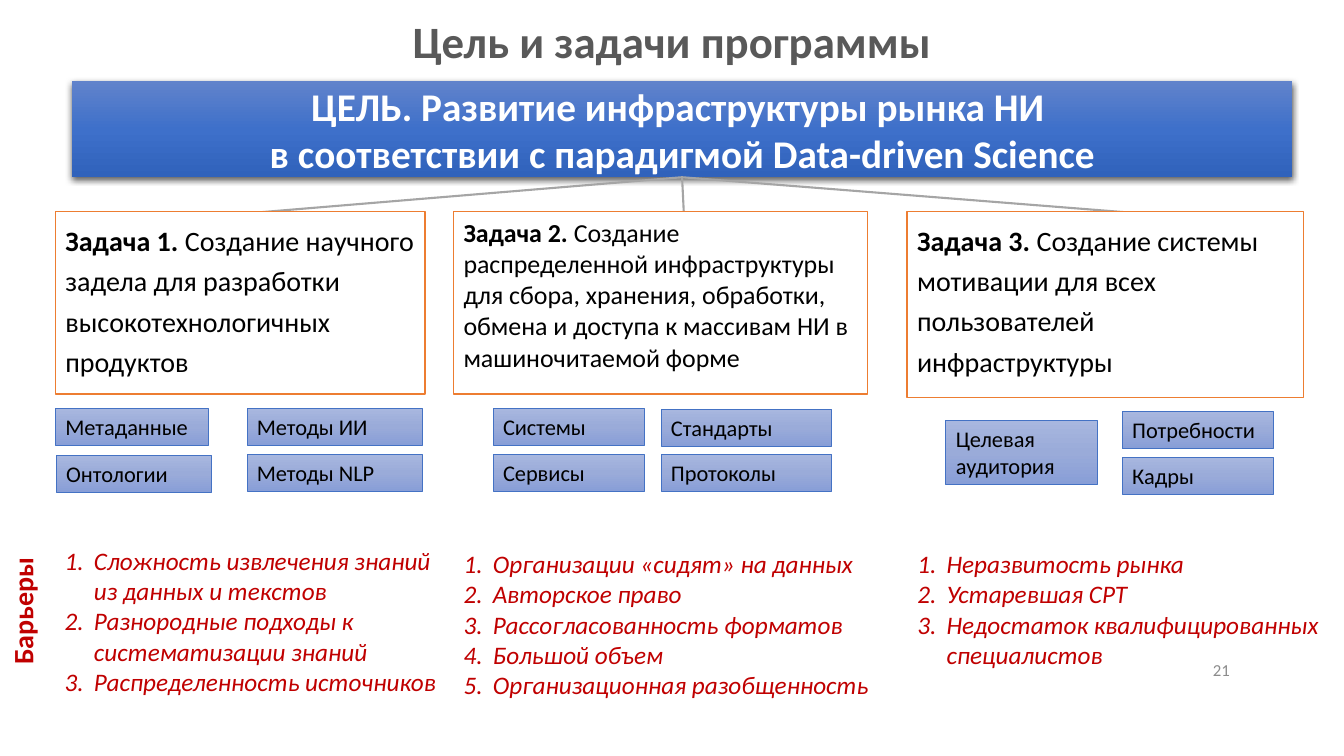
from copy import deepcopy

from lxml.etree import SubElement
from pptx import Presentation
from pptx.dml.color import RGBColor
from pptx.enum.shapes import MSO_CONNECTOR, MSO_SHAPE
from pptx.enum.text import MSO_ANCHOR, MSO_AUTO_SIZE, PP_ALIGN
from pptx.oxml.ns import qn
from pptx.util import Inches, Pt

COLS, ROWS = 160, 90
GOAL = ("6183CB", "3E70CA", "3062BB")
TAG = ("A8B7DF", "9AABD9", "889ED7")
RED, BLACK, WHITE = "C00000", "000000", "FFFFFF"

TASKS = [
    ((6.6, 25.2, 44, 21.7), 20, 1.2, "Задача 1. ",
     "Создание научного задела для разработки высокотехнологичных продуктов"),
    ((54, 25.2, 49.3, 21.7), 18.5, 1, "Задача 2. ",
     "Создание распределенной инфраструктуры для сбора, хранения, обработки, "
     "обмена и доступа к массивам НИ в машиночитаемой форме"),
    ((108, 25.2, 47.2, 22.1), 20, 1.2, "Задача 3. ",
     "Создание системы мотивации для всех пользователей инфраструктуры"),
]
TAGS = [
    ((6.6, 48.6, 18.2, 4.4), "Метаданные"),
    ((6.7, 54.2, 18.5, 4.4), "Онтологии"),
    ((29.4, 48.6, 20.9, 4.4), "Методы ИИ"),
    ((29.4, 54.1, 20.9, 4.4), "Методы NLP"),
    ((58.7, 48.6, 18, 4.4), "Системы"),
    ((58.7, 54.1, 18, 4.4), "Сервисы"),
    ((78.7, 48.7, 20.3, 4.4), "Стандарты"),
    ((78.7, 54.1, 20.3, 4.4), "Протоколы"),
    ((112.6, 50, 18, 7.7), "Целевая\vаудитория"),
    ((133.6, 49, 18, 4.4), "Потребности"),
    ((133.6, 54.4, 18, 4.4), "Кадры"),
]
LISTS = [
    ((6.5, 64.3, 47.8, 23), [
        "Сложность извлечения знаний \vиз данных и текстов",
        "Разнородные подходы к \vсистематизации знаний",
        "Распределенность источников"]),
    ((54, 64.7, 51.1, 23), [
        "Организации «сидят» на данных", "Авторское право",
        "Рассогласованность форматов", "Большой объем",
        "Организационная разобщенность"]),
    ((108, 64.7, 50.6, 19.4), [
        "Неразвитость рынка", "Устаревшая СРТ",
        "Недостаток квалифицированных\vспециалистов"]),
]


def hue(code):
    """Turn a hex string into a colour."""
    return RGBColor.from_string(code)


class Board:
    """Holds the slide, its grid and its text style."""

    face = "Calibri"

    def __init__(self, deck):
        """Add a slide with a title and four bodies."""
        self.col = deck.slide_width / COLS
        self.row = deck.slide_height / ROWS
        self.slide = deck.slides.add_slide(deck.slide_layouts[4])
        self.shapes = self.slide.shapes

    def scale(self, box):
        """Turn grid units into lengths."""
        left, top, wide, high = box
        return (round(left * self.col), round(top * self.row),
                round(wide * self.col), round(high * self.row))

    def place(self, shape, box):
        """Move a placeholder onto the grid."""
        shape.left, shape.top, shape.width, shape.height = self.scale(box)

    def style(self, para, size, tone, bold=None, slant=None, align=PP_ALIGN.LEFT):
        """Set the font and alignment of a paragraph."""
        para.alignment = align
        font = para.font
        font.name, font.size = self.face, Pt(size)
        font.bold, font.italic = bold, slant
        font.color.rgb = hue(tone)

    def title(self, box, text):
        """Fill the title."""
        shape = self.shapes.title
        self.place(shape, box)
        frame = shape.text_frame
        frame.text = text
        frame.vertical_anchor = MSO_ANCHOR.TOP
        frame.auto_size = MSO_AUTO_SIZE.NONE
        para = frame.paragraphs[0]
        para.line_spacing = 0.9
        self.style(para, 32, "595959", True, align=PP_ALIGN.CENTER)

    def list(self, slot, box, items):
        """Fill a body with a numbered list."""
        shape = self.slide.placeholders[slot]
        self.place(shape, box)
        frame = shape.text_frame
        frame.text = "\n".join(items)
        frame.vertical_anchor = MSO_ANCHOR.TOP
        frame.auto_size = MSO_AUTO_SIZE.NONE
        frame.word_wrap = False
        for para in frame.paragraphs:
            props = para._p.get_or_add_pPr()
            props.set("marL", str(Inches(0.29)))
            props.set("indent", str(-Inches(0.29)))
            SubElement(props, qn("a:buAutoNum"), type="arabicPeriod")
            para.space_before = Pt(0)
            self.style(para, 18, RED, False, True)

    def drop(self, slot):
        """Remove an unused placeholder."""
        item = self.slide.placeholders[slot]._element
        item.getparent().remove(item)

    def block(self, box, tones, edge=None, width=0.5):
        """Draw a plain or graded box."""
        shape = self.shapes.add_shape(MSO_SHAPE.RECTANGLE, *self.scale(box))
        shape.shadow.inherit = False
        shape.text_frame.word_wrap = True
        shape.text_frame.vertical_anchor = MSO_ANCHOR.TOP
        fill = shape.fill
        if len(tones) == 1:
            fill.solid()
            fill.fore_color.rgb = hue(tones[0])
        else:
            fill.gradient()
            fill.gradient_angle = 270
            stops = shape._element.spPr.find(".//" + qn("a:gsLst"))
            stops.insert(1, deepcopy(stops[0]))
            for stop, tone, spot in zip(fill.gradient_stops, tones, (0, 0.5, 1)):
                stop.color.rgb = hue(tone)
                stop.position = spot
        if edge:
            shape.line.color.rgb = hue(edge)
            shape.line.width = Pt(width)
        else:
            shape.line.fill.background()
        return shape

    def goal(self, box, text):
        """Draw the goal banner with its shadow."""
        shape = self.block(box, GOAL)
        effect = shape._element.spPr.find(qn("a:effectLst"))
        shade = SubElement(effect, qn("a:outerShdw"), blurRad=str(Pt(4.5)),
                           dist=str(Pt(1.5)), dir="5400000", rotWithShape="0")
        tone = SubElement(shade, qn("a:srgbClr"), val=BLACK)
        SubElement(tone, qn("a:alpha"), val="63000")
        frame = shape.text_frame
        frame.vertical_anchor = MSO_ANCHOR.MIDDLE
        para = frame.paragraphs[0]
        para.text = text
        self.style(para, 28, WHITE, True, align=PP_ALIGN.CENTER)

    def task(self, box, size, pitch, head, text):
        """Draw a task with a bold lead."""
        para = self.block(box, [WHITE], "ED7D31", 1).text_frame.paragraphs[0]
        for part, bold in ((head, True), (text, False)):
            run = para.add_run()
            run.text, run.font.bold = part, bold
        para.line_spacing, para.space_before = pitch, Pt(10)
        self.style(para, size, BLACK)

    def tag(self, box, text):
        """Draw a small keyword box."""
        para = self.block(box, TAG, "4472C4").text_frame.paragraphs[0]
        para.text = text
        self.style(para, 16, BLACK)

    def label(self, box, text, size, tone, bold, align, turn=0):
        """Write a free line of text."""
        shape = self.shapes.add_textbox(*self.scale(box))
        shape.rotation = turn
        frame = shape.text_frame
        frame.word_wrap = not turn
        frame.vertical_anchor = MSO_ANCHOR.TOP if turn else MSO_ANCHOR.MIDDLE
        para = frame.paragraphs[0]
        para.text = text
        self.style(para, size, tone, bold, align=align)

    def link(self, start, end):
        """Draw a grey line between two points."""
        line = self.shapes.add_connector(
            MSO_CONNECTOR.STRAIGHT, *self.scale(start + end))
        line.line.color.rgb = hue("A5A5A5")
        line.line.width = Pt(1.5)
        SubElement(line._element.spPr, qn("a:effectLst"))


def main():
    """Build and save the slide."""
    deck = Presentation()
    deck.slide_width, deck.slide_height = Inches(13.33), Inches(7.5)
    board = Board(deck)
    board.title((11, 1.7, 138, 8.4), "Цель и задачи программы")
    board.goal((8.6, 9.7, 145.2, 11.4),
               "ЦЕЛЬ. Развитие инфраструктуры рынка НИ \v"
               "в соответствии с парадигмой Data-driven Science")
    for end in ((30.6, 25.3), (134.4, 25.3), (81.4, 25.2)):
        board.link((81.2, 21.1), end)
    for task in TASKS:
        board.task(*task)
    for tag in TAGS:
        board.tag(*tag)
    for slot, (box, items) in enumerate(LISTS, 1):
        board.list(slot, box, items)
    board.drop(4)
    board.label((-5, 70.1, 15.4, 5.3), "Барьеры", 20, RED, True, PP_ALIGN.CENTER, 270)
    board.label((111.6, 77.4, 36, 4.8), "21", 12, "8C8C8C", False, PP_ALIGN.RIGHT)
    deck.save("out.pptx")


if __name__ == "__main__":
    main()
